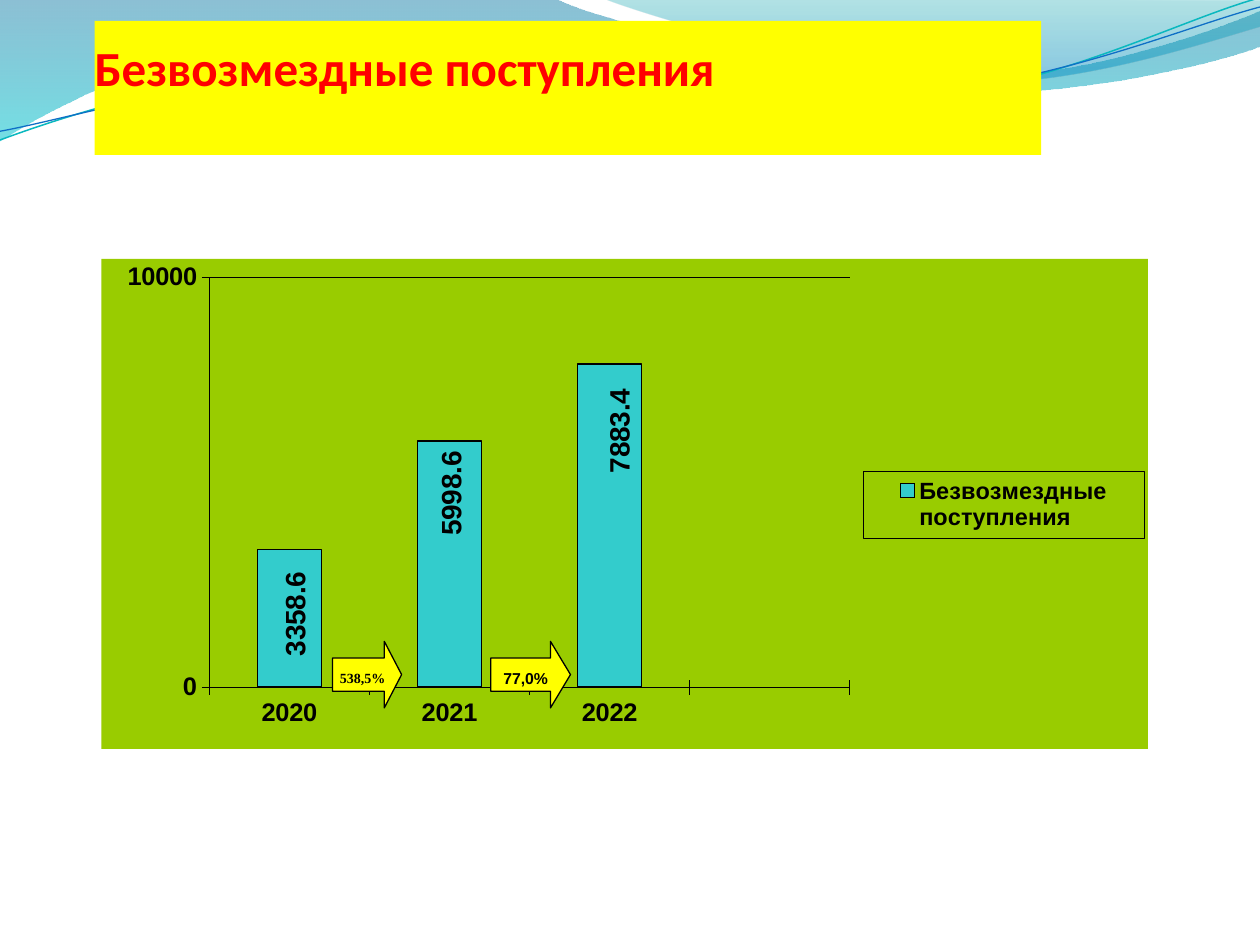
from dataclasses import dataclass

from lxml.etree import SubElement
from pptx import Presentation
from pptx.chart.data import CategoryChartData
from pptx.dml.color import RGBColor
from pptx.enum.chart import XL_CHART_TYPE as ChartType
from pptx.enum.chart import XL_LABEL_POSITION as LabelPosition
from pptx.enum.chart import XL_LEGEND_POSITION as LegendPosition
from pptx.enum.chart import XL_TICK_LABEL_POSITION as TickLabelPosition
from pptx.enum.chart import XL_TICK_MARK as TickMark
from pptx.enum.shapes import MSO_SHAPE as Preset
from pptx.enum.text import MSO_ANCHOR as Anchor
from pptx.enum.text import PP_ALIGN as Align
from pptx.oxml import parse_xml
from pptx.oxml.ns import nsdecls, qn
from pptx.util import Pt

COLORS = {
    "black": "000000", "red": "FF0000", "yellow": "FFFF00",
    "green": "99CC00", "turquoise": "33CCCC",
    "deep": "0074A1", "aqua": "00C6CF", "teal": "00A1A9", "ocean": "008BBF",
    "cyan line": "0AB8BF", "blue line": "0F6FC6",
}


@dataclass
class Stop:
    position: float
    color: str
    opacity: int


@dataclass
class Wave:
    start: tuple
    pieces: list
    stops: tuple = ()
    line_color: str = ""
    line_width: float = 0


@dataclass
class GrowthArrow:
    left: float
    width: float
    head: float
    text: str
    size: float
    font: str


WAVES = [
    Wave((0, -1), [
        ((317, -1),),
        ((343, 12), (478, 45), (546, 45)),
        ((614, 45), (690, 19), (720, 6)),
        ((721, 26),),
        ((708, 32), (626, 55), (537, 54)),
        ((448, 54), (275, 20), (185, 24)),
        ((93, 25), (33, 60), (-1, 81)),
    ], stops=(Stop(0, "deep", 45), Stop(1, "aqua", 55))),
    Wave((345, -1), [
        ((366, 8), (491, 45), (554, 47)),
        ((616, 49), (692, 23), (720, 15)),
        ((720, 0),),
    ], stops=(Stop(0, "teal", 30), Stop(0.8, "ocean", 45))),
    Wave((0, 80), [
        ((35, 67), (114, 41), (199, 37)),
        ((284, 34), (427, 64), (513, 58)),
        ((600, 51), (675, 11), (719, -1)),
    ], line_color="cyan line", line_width=0.85),
    Wave((0, 75), [
        ((34, 69), (118, 44), (204, 40)),
        ((290, 37), (430, 60), (516, 54)),
        ((602, 48), (678, 15), (720, 4)),
    ], line_color="blue line", line_width=0.75),
]
ARROWS = [
    GrowthArrow(190, 39.5, 0.26, "538,5%", 8, "Times New Roman"),
    GrowthArrow(280.5, 45.5, 0.3, "77,0%", 9, "Arial"),
]
LABEL_SHIFTS = [(0.006, 0.036), (0.002, 0.011), (0.01, 0.041)]


def rgb(name: str) -> RGBColor:
    return RGBColor.from_string(COLORS[name])


def set_font(font, size: float, name: str = "Arial", color: str = "black") -> None:
    font.size, font.name, font.bold = Pt(size), name, True
    font.color.rgb = rgb(color)


def set_line(line, width: float, color: str = "black") -> None:
    line.color.rgb, line.width = rgb(color), Pt(width)


def write_text(shape, text: str, *, size: float, name: str, color: str = "black",
               align=Align.LEFT, anchor=Anchor.MIDDLE, wrap: bool = True,
               insets: tuple = (0, 0, 0, 0)) -> None:
    frame = shape.text_frame
    frame.word_wrap, frame.vertical_anchor = wrap, anchor
    (frame.margin_left, frame.margin_top,
     frame.margin_right, frame.margin_bottom) = map(Pt, insets)
    para = frame.paragraphs[0]
    para.alignment = align
    span = para.add_run()
    span.text = text
    set_font(span.font, size, name, color)


def bend_segments(shape, pieces: list) -> None:
    segments = iter(shape._element.xpath(".//a:path/a:lnTo"))
    for piece in pieces:
        group = [next(segments) for _ in piece]
        if len(group) == 1:
            continue
        curve = parse_xml(f'<a:cubicBezTo {nsdecls("a")}/>')
        group[0].addprevious(curve)
        for segment in group:
            curve.append(segment[0])
            segment.getparent().remove(segment)


def draw_wave(page, wave: Wave) -> None:
    builder = page.shapes.build_freeform(Pt(wave.start[0]), Pt(wave.start[1]))
    builder.add_line_segments([(Pt(x), Pt(y)) for piece in wave.pieces for x, y in piece],
                              close=bool(wave.stops))
    shape = builder.convert_to_shape()
    bend_segments(shape, wave.pieces)
    shape.shadow.inherit = False
    if not wave.stops:
        shape.fill.background()
        set_line(shape.line, wave.line_width, wave.line_color)
        return
    shape.line.fill.background()
    shape.fill.gradient()
    shape.fill.gradient_angle = 270
    for target, stop in zip(shape.fill.gradient_stops, wave.stops):
        target.position = stop.position
        target.color.rgb = rgb(stop.color)
    for color, stop in zip(shape._element.xpath(".//a:gs/a:srgbClr"), wave.stops):
        SubElement(color, qn("a:alpha"), val=str(stop.opacity * 1000))


def add_preset(page, preset, left: float, top: float, width: float, height: float):
    shape = page.shapes.add_shape(preset, Pt(left), Pt(top), Pt(width), Pt(height))
    shape.shadow.inherit = False
    shape.fill.solid()
    shape.fill.fore_color.rgb = rgb("yellow")
    return shape


def draw_title(page) -> None:
    box = add_preset(page, Preset.RECTANGLE, 54, 12, 541, 76.5)
    box.line.fill.background()
    write_text(box, "Безвозмездные поступления", size=28, name="Calibri",
               color="red", anchor=Anchor.BOTTOM, insets=(0, 3.6, 0, 33.5))


def draw_arrow(page, arrow: GrowthArrow) -> None:
    shape = add_preset(page, Preset.RIGHT_ARROW, arrow.left, 366.5, arrow.width, 38)
    shape.adjustments[0], shape.adjustments[1] = 0.5, arrow.head
    set_line(shape.line, 0.75)
    write_text(shape, arrow.text, size=arrow.size, name=arrow.font,
               align=Align.CENTER, wrap=False, insets=(0, 4, 0, 0))


def manual_layout(inner: bool = False, **values: float):
    target = '<c:layoutTarget val="inner"/>' if inner else ""
    modes = '<c:xMode val="edge"/><c:yMode val="edge"/>' if "w" in values else ""
    sizes = "".join(f'<c:{key} val="{value}"/>' for key, value in values.items())
    return parse_xml(f'<c:layout {nsdecls("c")}><c:manualLayout>{target}{modes}{sizes}'
                     '</c:manualLayout></c:layout>')


def area_format(fill: str):
    return parse_xml(f'<c:spPr {nsdecls("c", "a")}>{fill}</c:spPr>')


def solid(color: str) -> str:
    return f'<a:solidFill><a:srgbClr val="{COLORS[color]}"/></a:solidFill>'


def format_labels(root, series) -> None:
    labels = series.data_labels
    labels.show_value = True
    set_font(labels.font, 16)
    for index in range(len(LABEL_SHIFTS)):
        label = series.points[index].data_label
        set_font(label.font, 16)
        label.position = LabelPosition.INSIDE_END
    for label, (x, y) in zip(root.xpath(".//c:dLbl"), LABEL_SHIFTS):
        label.xpath("c:idx")[0].addnext(manual_layout(x=x, y=y))
    for body in root.xpath(".//c:dLbls//c:txPr/a:bodyPr"):
        body.set("rot", "-5400000")
        body.set("vert", "horz")
    group = root.xpath(".//c:ser/c:dLbls")[0]
    for leader in group.xpath("c:showLeaderLines"):
        leader.set("val", "0")
    group.append(parse_xml(
        f'<c:extLst {nsdecls("c")}><c:ext uri="{{CE6537A1-D6FC-4f65-9D91-7224C49458BB}}" '
        'xmlns:c15="http://schemas.microsoft.com/office/drawing/2012/chart">'
        '<c15:showLeaderLines val="0"/></c:ext></c:extLst>'))


def draw_chart(page) -> None:
    data = CategoryChartData()
    data.categories = ["2020", "2021", "2022", ""]
    data.add_series("Безвозмездные поступления", (3358.6, 5998.6, 7883.4, None))
    chart = page.shapes.add_chart(ChartType.COLUMN_CLUSTERED, Pt(58), Pt(148),
                                  Pt(598), Pt(280), data).chart
    chart.has_title = False
    set_font(chart.font, 14.5)
    root = chart.element
    root.xpath("c:chart")[0].addnext(area_format(solid("green") + "<a:ln><a:noFill/></a:ln>"))

    plot_area = root.xpath("c:chart/c:plotArea")[0]
    for layout in plot_area.xpath("c:layout"):
        plot_area.remove(layout)
    plot_area.insert(0, manual_layout(inner=True, x=0.103, y=0.037, w=0.612, h=0.837))

    for axis in (chart.category_axis, chart.value_axis):
        set_font(axis.tick_labels.font, 14.5)
        set_line(axis.format.line, 0.2)
        axis.major_tick_mark, axis.minor_tick_mark = TickMark.CROSS, TickMark.NONE
    chart.category_axis.tick_label_position = TickLabelPosition.LOW
    scale = chart.value_axis
    scale.minimum_scale, scale.maximum_scale, scale.major_unit = 0, 10000, 10000
    scale.has_major_gridlines = True
    set_line(scale.major_gridlines.format.line, 0.2)

    plot = chart.plots[0]
    plot.vary_by_categories, plot.gap_width = False, 150
    series = plot.series[0]
    series.invert_if_negative = False
    series.format.fill.solid()
    series.format.fill.fore_color.rgb = rgb("turquoise")
    set_line(series.format.line, 0.81)
    format_labels(root, series)

    chart.has_legend = True
    legend = chart.legend
    legend.position, legend.include_in_layout = LegendPosition.RIGHT, False
    set_font(legend.font, 13.4)
    for layout in root.xpath(".//c:legend/c:layout"):
        layout.getparent().remove(layout)
    root.xpath(".//c:legend/c:legendPos")[0].addnext(
        manual_layout(x=0.728, y=0.433, w=0.268, h=0.137))
    root.xpath(".//c:legend/c:txPr")[0].addprevious(
        area_format(f'<a:noFill/><a:ln w="2540">{solid("black")}</a:ln>'))


def main() -> None:
    deck = Presentation()
    deck.slide_width, deck.slide_height = Pt(720), Pt(540)
    page = deck.slides.add_slide(deck.slide_layouts[6])
    for wave in WAVES:
        draw_wave(page, wave)
    draw_title(page)
    draw_chart(page)
    for arrow in ARROWS:
        draw_arrow(page, arrow)
    deck.save("out.pptx")


if __name__ == "__main__":
    main()
